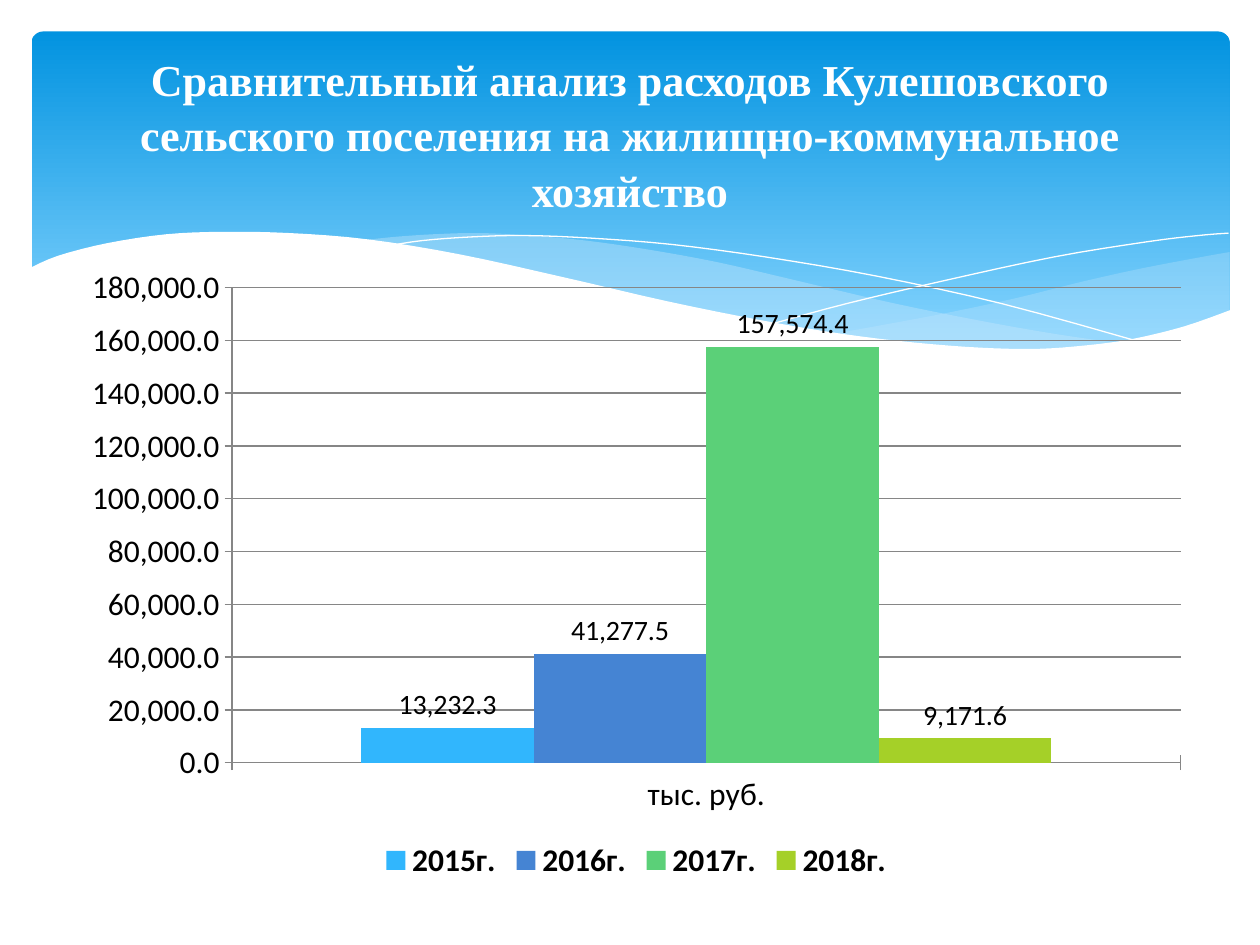
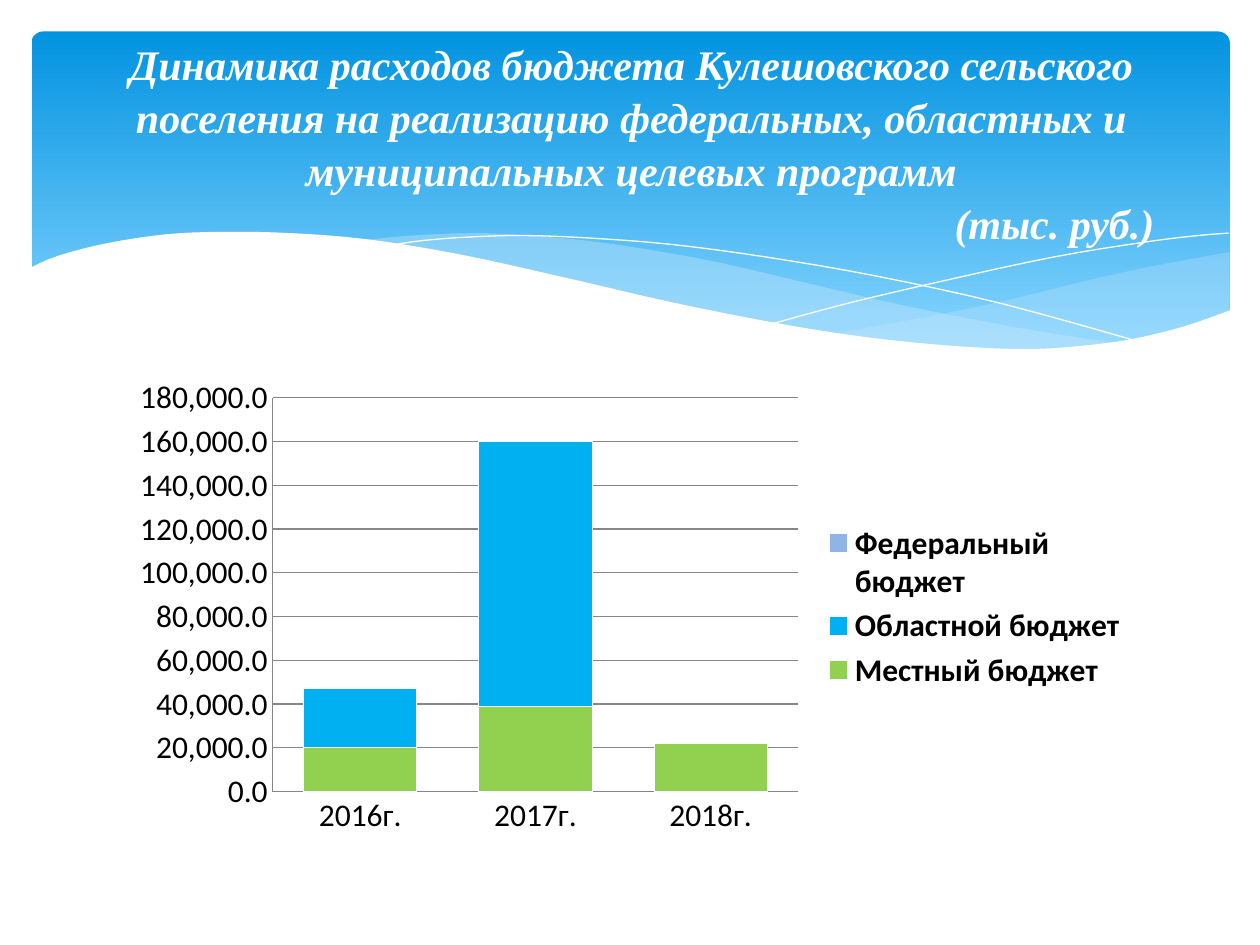
from lxml.etree import SubElement
from pptx import Presentation
from pptx.chart.data import CategoryChartData
from pptx.dml.color import RGBColor
from pptx.enum.chart import XL_CHART_TYPE, XL_LABEL_POSITION, XL_LEGEND_POSITION, XL_TICK_MARK
from pptx.enum.shapes import MSO_SHAPE
from pptx.enum.text import MSO_ANCHOR, MSO_AUTO_SIZE, PP_ALIGN
from pptx.oxml.ns import qn
from pptx.util import Pt

COLORS = {
    "white": "FFFFFF", "black": "000000", "grid": "868686",
    "band top": "0293E0", "band bottom": "83D3FE", "wave": "C6E7FC",
    "sky": "31B6FD", "blue": "4584D3", "green": "5BD078", "lime": "A5D028",
    "local": "92D050", "regional": "00B0F0", "federal": "8FB5E5",
}
TITLE_FONT, CHART_FONT = "Times New Roman", "Calibri"
NUMBER_FORMAT = "#,##0.0"

# Content
SLIDES = [
    {
        "title": [("Сравнительный анализ расходов Кулешовского сельского поселения "
                   "на жилищно-коммунальное хозяйство", PP_ALIGN.CENTER)],
        "title box": (36, 26.6, 648, 98.6), "title size": 25.2, "italic": False,
        "chart box": (39.6, 146.2, 648, 360),
        "type": XL_CHART_TYPE.COLUMN_CLUSTERED, "gap": 150, "overlap": 0,
        "legend": XL_LEGEND_POSITION.BOTTOM, "tick": XL_TICK_MARK.CROSS,
        "labels": True, "outline": None,
        "categories": ["тыс. руб."],
        "series": [("2015г.", [13232.3], "sky"), ("2016г.", [41277.5], "blue"),
                   ("2017г.", [157574.4], "green"), ("2018г.", [9171.6], "lime")],
    },
    {
        "title": [("Динамика расходов бюджета Кулешовского сельского поселения на реализацию "
                   "федеральных, областных и муниципальных целевых программ", PP_ALIGN.CENTER),
                  ("(тыс. руб.)", PP_ALIGN.RIGHT)],
        "title box": (36.7, 25.9, 648, 110.2), "title size": 24, "italic": True,
        "chart box": (68.4, 211, 583.2, 271.4),
        "type": XL_CHART_TYPE.COLUMN_STACKED, "gap": 55, "overlap": 100,
        "legend": XL_LEGEND_POSITION.RIGHT, "tick": XL_TICK_MARK.NONE,
        "labels": False, "outline": "white",
        "categories": ["2016г.", "2017г.", "2018г."],
        "series": [("Местный бюджет", [20000, 39000, 22000], "local"),
                   ("Областной бюджет", [27000, 121000, 0], "regional"),
                   ("Федеральный бюджет", [0, 0, 0], "federal")],
    },
]

# Key points of the header curves, in points
RIGHT_WAVE = [
    [(702.7, 144), (682.6, 147.6), (652.3, 153.4), (619.9, 160.6), (579.6, 170.6),
     (542.2, 178.6), (508.3, 185), (475.9, 190.8)],
    [(475.9, 190.8), (507.6, 195.1), (536.4, 198), (562.3, 199.4), (586.1, 200.2),
     (607.7, 199.4), (627.8, 197.3), (645.8, 194.4), (663.1, 190.8), (683.3, 185), (702.7, 177.8)],
]
LEFT_WAVE = [
    [(643, 196.6), (602.6, 190.8), (558, 182.9), (508.3, 172.8), (452.9, 159.8), (409.7, 149.8),
     (370.1, 142.6), (334.8, 137.5), (302.4, 134.6), (273.6, 133.2), (247.7, 133.9),
     (225.4, 135.4), (205.9, 137.5)],
    [(205.9, 137.5), (246.2, 143.3), (290.9, 151.9), (323.3, 159.8), (381.6, 172.8),
     (432.7, 183.6), (478.8, 191.5), (520.6, 197.3), (556.6, 199.4), (589, 200.2),
     (617, 199.4), (643, 196.6)],
]
FALLING_LINE = [[(222.5, 140.4), (241.2, 137.5), (269.3, 135.4), (299.5, 134.6), (337.7, 136.1),
                 (383.8, 139.7), (437.8, 146.9), (500.4, 157.7), (572.4, 173.5), (653, 195.8)]]
RISING_LINE = [[(441.4, 185), (483.8, 173.5), (538.6, 160.6), (601.9, 146.9), (655.2, 138.2),
                (684.7, 134.6), (702, 133.2)]]
WHITE_WAVE = [
    [(16.6, 153.4), (33.1, 146.2), (61.2, 139), (95, 133.9), (127.4, 132.5), (165.6, 133.2),
     (210.2, 136.8), (262.8, 145.4), (321.8, 158.4), (380.9, 172.1), (434.2, 182.9),
     (481, 190.8), (522.7, 195.8), (560.2, 198.7), (592.6, 199.4), (621.4, 197.3),
     (647.3, 193.7), (676.8, 186.5), (703.4, 177.1)],
    [(703.4, 236.9), (16.6, 236.9)],
]
# Curves, fill colour, opacity in percent; no fill means a white hairline
HEADER_CURVES = [
    (RIGHT_WAVE, "wave", 29), (LEFT_WAVE, "wave", 40),
    (FALLING_LINE, None, 100), (RISING_LINE, None, 100), (WHITE_WAVE, "white", 100),
]


def rgb(name):
    return RGBColor.from_string(COLORS[name])


def box_in_points(box):
    return [Pt(length) for length in box]


def smooth(points, steps=4):
    """Catmull-Rom curve through the points."""
    padded = [points[0], *points, points[-1]]
    curve = [points[0]]
    for a, b, c, d in zip(padded, padded[1:], padded[2:], padded[3:]):
        for step in range(1, steps + 1):
            t = step / steps
            curve.append(tuple(
                q + ((r - p) * t + (2 * p - 5 * q + 4 * r - s) * t ** 2
                     + (3 * q - p - 3 * r + s) * t ** 3) / 2
                for p, q, r, s in zip(a, b, c, d)))
    return curve


def add_curve(page, runs, fill, opacity):
    points = [(Pt(x), Pt(y)) for run in runs for x, y in (smooth(run) if len(run) > 2 else run)]
    builder = page.shapes.build_freeform(*points[0])
    builder.add_line_segments(points[1:], close=fill is not None)
    curve = builder.convert_to_shape()
    if fill is None:
        curve.fill.background()
        curve.line.color.rgb = rgb("white")
        curve.line.width = Pt(0)
    else:
        curve.fill.solid()
        curve.fill.fore_color.rgb = rgb(fill)
        curve.line.fill.background()
        if opacity < 100:
            color = curve._element.spPr.find(f"{qn('a:solidFill')}/{qn('a:srgbClr')}")
            SubElement(color, qn("a:alpha")).set("val", str(opacity * 1000))
    return curve


def add_header(page, layout):
    """Draw the header band and hand it to the layout that all slides share."""
    band = page.shapes.add_shape(MSO_SHAPE.ROUNDED_RECTANGLE, *box_in_points((18, 18, 684.7, 194.4)))
    band.adjustments[0] = 0.034
    band.fill.gradient()
    band.fill.gradient_angle = 270
    for stop, name, position in zip(band.fill.gradient_stops, ("band top", "band bottom"), (0, 0.9)):
        stop.color.rgb = rgb(name)
        stop.position = position
    band.line.fill.background()
    parts = [band] + [add_curve(page, *curve) for curve in HEADER_CURVES]
    for number, part in enumerate(parts, start=100):
        part.shadow.inherit = False
        part._element.nvSpPr.cNvPr.set("id", str(number))
        layout.shapes._spTree.append(part._element)


def add_chart(page, content):
    data = CategoryChartData(number_format=NUMBER_FORMAT)
    data.categories = content["categories"]
    for name, values, _ in content["series"]:
        data.add_series(name, values)
    chart = page.shapes.add_chart(content["type"], *box_in_points(content["chart box"]), data).chart
    chart.has_title = False
    chart.font.name, chart.font.size = CHART_FONT, Pt(18)
    chart.font.color.rgb = rgb("black")

    # Legend and axes
    chart.has_legend = True
    chart.legend.position = content["legend"]
    chart.legend.include_in_layout = False
    chart.legend.font.bold = True
    for axis in (chart.category_axis, chart.value_axis):
        axis.major_tick_mark = content["tick"]
        axis.minor_tick_mark = XL_TICK_MARK.NONE
        axis.format.line.color.rgb = rgb("grid")
    chart.value_axis.has_major_gridlines = True
    chart.value_axis.major_gridlines.format.line.color.rgb = rgb("grid")
    chart.value_axis.tick_labels.number_format = NUMBER_FORMAT
    chart.value_axis.tick_labels.number_format_is_linked = False

    # Columns
    plot = chart.plots[0]
    plot.vary_by_categories = False
    plot.gap_width, plot.overlap = content["gap"], content["overlap"]
    for series, (_, _, color) in zip(plot.series, content["series"]):
        series.format.fill.solid()
        series.format.fill.fore_color.rgb = rgb(color)
        if content["outline"]:
            series.format.line.color.rgb = rgb(content["outline"])
    if content["labels"]:
        plot.has_data_labels = True
        labels = plot.data_labels
        labels.show_value = True
        labels.number_format, labels.number_format_is_linked = NUMBER_FORMAT, False
        labels.position = XL_LABEL_POSITION.OUTSIDE_END
        labels.font.size = Pt(16)


def set_title(page, content):
    title = page.shapes.title
    title.left, title.top, title.width, title.height = box_in_points(content["title box"])
    frame = title.text_frame
    frame.auto_size, frame.word_wrap = MSO_AUTO_SIZE.NONE, True
    frame.vertical_anchor = MSO_ANCHOR.MIDDLE
    frame.margin_left = frame.margin_right = Pt(25)
    frame.text = "\n".join(text for text, _ in content["title"])
    for para, (_, alignment) in zip(frame.paragraphs, content["title"]):
        para.alignment = alignment
        para.line_spacing = 1.05
        para.space_before = Pt(0)
        font = para.font
        font.name, font.size = TITLE_FONT, Pt(content["title size"])
        font.bold, font.italic = True, content["italic"]
        font.color.rgb = rgb("white")
    page.shapes._spTree.append(title._element)  # in front of the chart


def main():
    deck = Presentation()
    deck.slide_width, deck.slide_height = Pt(720), Pt(540)
    layout = deck.slide_layouts[5]
    for number, content in enumerate(SLIDES):
        page = deck.slides.add_slide(layout)
        if number == 0:
            add_header(page, layout)
        add_chart(page, content)
        set_title(page, content)
    deck.save("out.pptx")


if __name__ == "__main__":
    main()
